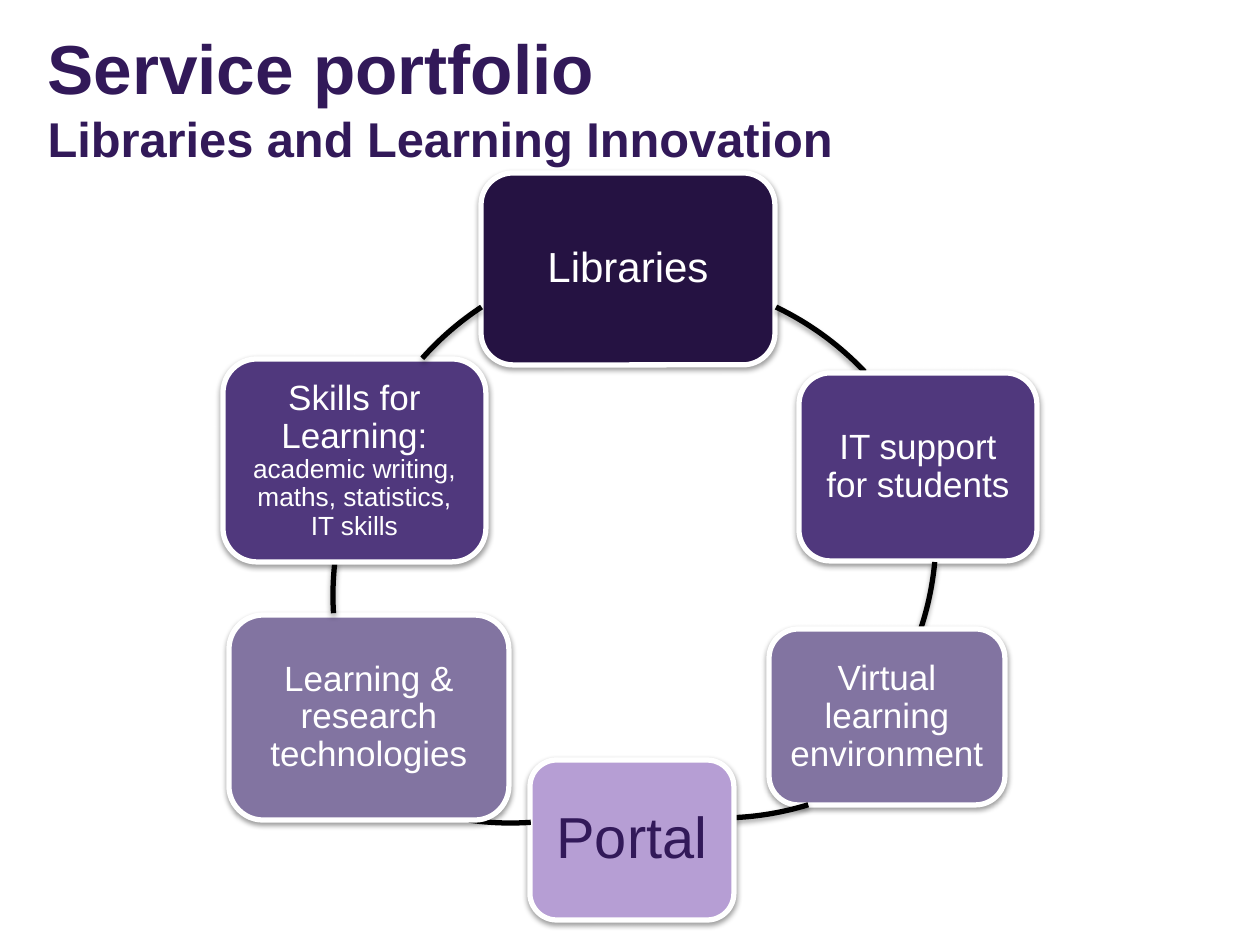
from lxml.etree import SubElement
from pptx import Presentation
from pptx.dml.color import RGBColor
from pptx.enum.shapes import MSO_SHAPE
from pptx.enum.text import MSO_ANCHOR, MSO_AUTO_SIZE, PP_ALIGN
from pptx.oxml.ns import qn
from pptx.util import Pt

PX = 914400 / 126
COLORS = {
    "title": "321959", "dark": "251242", "purple": "50387D", "muted": "8274A1",
    "lilac": "B69ED4", "white": "FFFFFF", "black": "000000",
}
RING = 597  # diameter of the circle that every arc belongs to


def add_run(paragraph, text, size, color, bold=False):
    run = paragraph.add_run()
    run.text = text
    run.font.name = "Arial"
    run.font.size = Pt(size)
    run.font.bold = bold
    run.font.color.rgb = RGBColor.from_string(COLORS[color])


def add_outlined(kind, box, line_color, shadow_alpha, shadow_distance):
    shape = slide.shapes.add_shape(kind, *[round(v * PX) for v in box])
    shape.line.color.rgb = RGBColor.from_string(COLORS[line_color])
    shape.line.width = Pt(3)
    shape.shadow.inherit = False
    if shadow_alpha:
        effects = shape._element.spPr.find(qn("a:effectLst"))
        shadow = SubElement(effects, qn("a:outerShdw"), blurRad="40000",
                            dist=str(shadow_distance), dir="5400000", rotWithShape="0")
        shade = SubElement(shadow, qn("a:srgbClr"), val=COLORS["black"])
        SubElement(shade, qn("a:alpha"), val=str(shadow_alpha * 1000))
    return shape


prs = Presentation()
prs.slide_width, prs.slide_height = round(1260 * PX), round(945 * PX)
slide = prs.slides.add_slide(prs.slide_layouts[5])

# Title
title = slide.shapes.title
title.left, title.top, title.width, title.height = [round(v * PX) for v in (35, 38, 1154, 117)]
title.text_frame.auto_size = MSO_AUTO_SIZE.NONE
title.text_frame.vertical_anchor = MSO_ANCHOR.MIDDLE
heading = title.text_frame.paragraphs[0]
heading.alignment = PP_ALIGN.LEFT
add_run(heading, "Service portfolio", 39.6, "title", True)
heading.add_line_break()
add_run(heading, "Libraries and Learning Innovation", 27.9, "title", True)

# Services clockwise: box, fill, text colour, inset, runs,
# then the arc to the next one: left, top, start and end in degrees, shadow alpha
services = [
    ((481, 173, 294, 192), "dark", "white", 13, [("Libraries", 24)],
     (349, 278, 295.5, 316.7, 35)),
    ((799, 373, 238, 188), "purple", "white", 10, [("IT support for students", 20)],
     (339, 236, 5.3, 18.2, 35)),
    ((769, 629, 236, 176), "muted", "white", 10, [("Virtual learning environment", 20)],
     (422, 221, 72.9, 87.1, 35)),
    ((530, 760, 204, 160), "lilac", "title", 18, [("Portal", 33)],
     (212, 226, 86.1, 98, 0)),
    ((229, 615, 280, 205), "muted", "white", 10, [("Learning & research technologies", 20)],
     (333, 297, 176.6, 186.6, 35)),
    ((223, 359, 263, 203), "purple", "white", 10,
     [("Skills for Learning: ", 20), ("academic writing, maths, statistics, IT skills", 15)],
     (347, 258, 221.6, 236.7, 35)),
]

for box, fill, text_color, inset, runs, (left, top, start, end, alpha) in services:
    # Service box
    service = add_outlined(MSO_SHAPE.ROUNDED_RECTANGLE, box, "white", 38, 20000)
    service.fill.solid()
    service.fill.fore_color.rgb = RGBColor.from_string(COLORS[fill])
    frame = service.text_frame
    frame.word_wrap = True
    frame.vertical_anchor = MSO_ANCHOR.MIDDLE
    frame.margin_left = frame.margin_right = round(inset * PX)
    frame.margin_top = frame.margin_bottom = round(inset * PX)
    label = frame.paragraphs[0]
    label.alignment = PP_ALIGN.CENTER
    label.line_spacing = 0.9
    for text, size in runs:
        add_run(label, text, size, text_color)

    # Arc to the next service; an arc's angles count in 60000ths of a degree
    arc = add_outlined(MSO_SHAPE.ARC, (left, top, RING, RING), "black", alpha, 23000)
    arc.fill.background()
    arc.adjustments[0] = start * 0.6
    arc.adjustments[1] = end * 0.6

prs.save("out.pptx")
